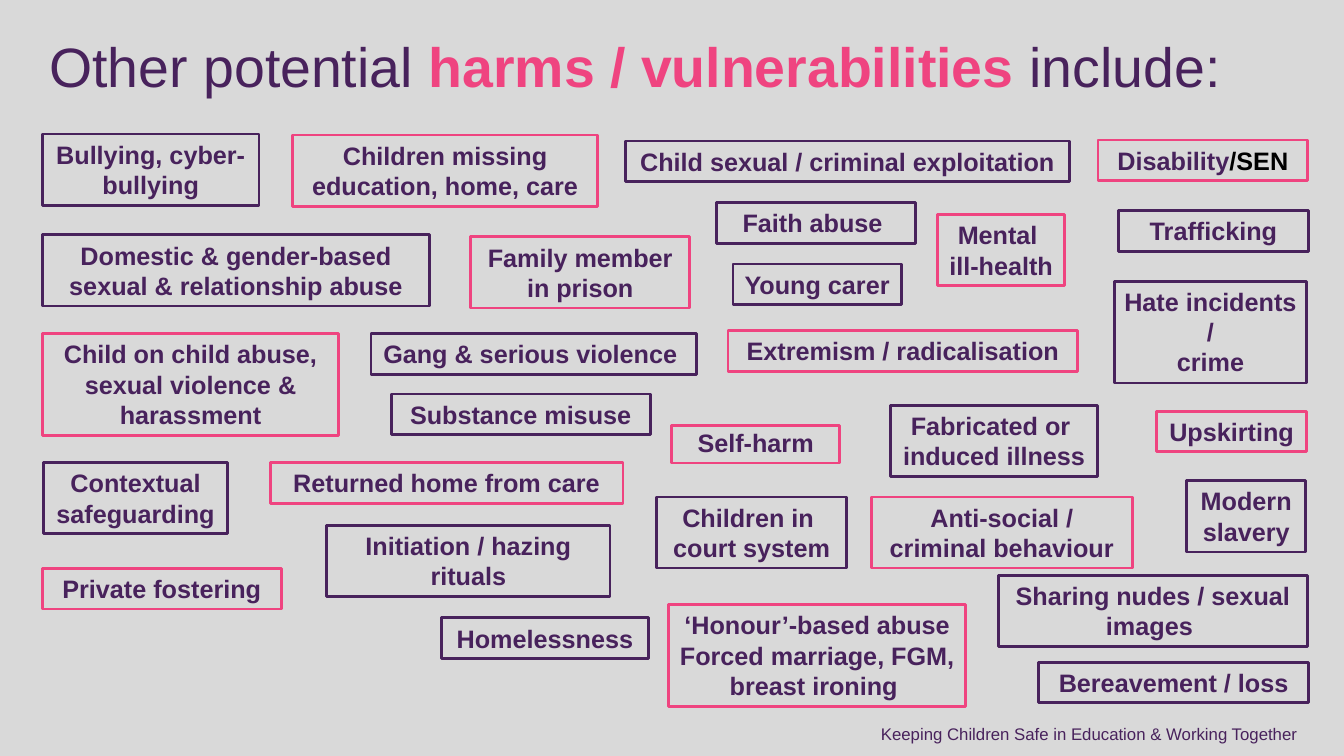
from pptx import Presentation
from pptx.dml.color import RGBColor
from pptx.enum.shapes import MSO_SHAPE
from pptx.enum.text import MSO_ANCHOR, MSO_AUTO_SIZE, PP_ALIGN
from pptx.util import Inches, Pt

PURPLE = RGBColor(0x48, 0x22, 0x5C)
PINK = RGBColor(0xEF, 0x44, 0x80)
BLACK = RGBColor(0, 0, 0)
GREY = RGBColor(0xD9, 0xD9, 0xD9)
FONT = "Arial"
LINE_HEIGHT = 0.303
PADDING = 0.1

# Harm: paragraphs split by line breaks, left, top, width, lines of text
PURPLE_HARMS = [
    ("Bullying, cyber-bullying", 0.42, 1.33, 2.15, 2),
    ("Child sexual / criminal exploitation", 6.2, 1.4, 4.41, 1),
    ("Domestic & gender-based sexual & relationship abuse", 0.42, 2.33, 3.84, 2),
    ("Trafficking", 11.09, 2.09, 1.89, 1),
    ("Gang & serious violence ", 3.68, 3.31, 3.23, 1),
    ("Fabricated or \ninduced illness", 8.83, 4.02, 2.06, 2),
    ("Faith abuse ", 7.11, 2.01, 1.97, 1),
    ("Hate incidents /\ncrime", 11.05, 2.79, 1.91, 3),
    ("Sharing nudes / sexual images ", 9.9, 5.71, 3.07, 2),
    ("Initiation / hazing rituals", 3.24, 5.21, 2.81, 2),
    ("Contextual safeguarding", 0.43, 4.59, 1.83, 2),
    ("Children in \ncourt system", 6.51, 4.93, 1.89, 2),
    ("Homelessness", 4.38, 6.13, 2.05, 1),
    ("Bereavement / loss", 10.3, 6.57, 2.68, 1),
    ("Young carer", 7.27, 2.62, 1.67, 1),
    ("Modern slavery", 11.77, 4.77, 1.18, 2),
    ("Substance misuse", 3.88, 3.91, 2.57, 1),
]
PINK_HARMS = [
    ("Children missing education, home, care", 2.9, 1.34, 3.03, 2),
    ("Child on child abuse, sexual violence & harassment", 0.42, 3.31, 2.94, 3),
    ("‘Honour’-based abuse Forced marriage, FGM, breast ironing ",
     6.63, 6, 2.95, 3),
    ("Mental \nill-health", 9.3, 2.13, 1.26, 2),
    ("Family member in prison", 4.67, 2.35, 2.17, 2),
    ("Extremism / radicalisation", 7.22, 3.28, 3.47, 1),
    ("Upskirting", 11.47, 4.08, 1.49, 1),
    ("Disability", 10.89, 1.39, 2.08, 1),
    ("Anti-social / criminal behaviour", 8.64, 4.93, 2.59, 2),
    ("Returned home from care", 2.68, 4.59, 3.5, 1),
    ("Private fostering", 0.42, 5.64, 2.37, 1),
    ("Self-harm", 6.66, 4.22, 1.67, 0.9),
]
SUFFIXES = {"Disability": "/SEN"}


def add_run(paragraph, text, size, color=PURPLE, bold=False):
    run = paragraph.add_run()
    run.text = text
    run.font.name = FONT
    run.font.size = Pt(size)
    run.font.bold = bold
    run.font.color.rgb = color


def add_heading(slide, left, top, width, height):
    heading = slide.shapes.title
    heading.left, heading.top = Inches(left), Inches(top)
    heading.width, heading.height = Inches(width), Inches(height)
    frame = heading.text_frame
    frame.vertical_anchor = MSO_ANCHOR.MIDDLE
    frame.auto_size = MSO_AUTO_SIZE.NONE
    paragraph = frame.paragraphs[0]
    paragraph.alignment = PP_ALIGN.LEFT
    paragraph.line_spacing = 0.9
    add_run(paragraph, "Other potential ", 39.6)
    add_run(paragraph, "harms / vulnerabilities", 39.6, PINK, True)
    add_run(paragraph, " include:", 39.6)


def add_harm(slide, border, text, left, top, width, lines):
    harm = slide.shapes.add_shape(
        MSO_SHAPE.RECTANGLE, Inches(left), Inches(top), Inches(width),
        Inches(PADDING + lines * LINE_HEIGHT))
    harm.shadow.inherit = False
    harm.fill.background()
    harm.line.color.rgb = border
    harm.line.width = Pt(2)
    frame = harm.text_frame
    frame.word_wrap = True
    frame.vertical_anchor = MSO_ANCHOR.TOP
    if lines >= 1:
        frame.auto_size = MSO_AUTO_SIZE.SHAPE_TO_FIT_TEXT
    for index, part in enumerate(text.split("\n")):
        paragraph = frame.add_paragraph() if index else frame.paragraphs[0]
        paragraph.alignment = PP_ALIGN.CENTER
        paragraph.line_spacing = min(lines, 1.0)
        add_run(paragraph, part, 18, bold=True)
    if text in SUFFIXES:
        add_run(paragraph, SUFFIXES[text], 18, BLACK, True)


def add_guidance(slide, left, top, width, height):
    guidance = slide.shapes.add_textbox(
        Inches(left), Inches(top), Inches(width), Inches(height))
    frame = guidance.text_frame
    frame.word_wrap = True
    frame.auto_size = MSO_AUTO_SIZE.SHAPE_TO_FIT_TEXT
    paragraph = frame.paragraphs[0]
    paragraph.alignment = PP_ALIGN.RIGHT
    add_run(paragraph, "Keeping Children Safe in Education & Working Together", 12)


def main():
    deck = Presentation()
    deck.slide_width, deck.slide_height = Inches(13.33), Inches(7.5)
    slide = deck.slides.add_slide(deck.slide_layouts[5])
    slide.background.fill.solid()
    slide.background.fill.fore_color.rgb = GREY

    # Heading
    add_heading(slide, 0.39, 0.39, 12.58, 0.59)
    # Scattered harms, outlined in two colours
    for border, harms in ((PURPLE, PURPLE_HARMS), (PINK, PINK_HARMS)):
        for harm in harms:
            add_harm(slide, border, *harm)
    # Guidance documents
    add_guidance(slide, 5.22, 7.13, 7.75, 0.3)

    deck.save("out.pptx")


if __name__ == "__main__":
    main()
